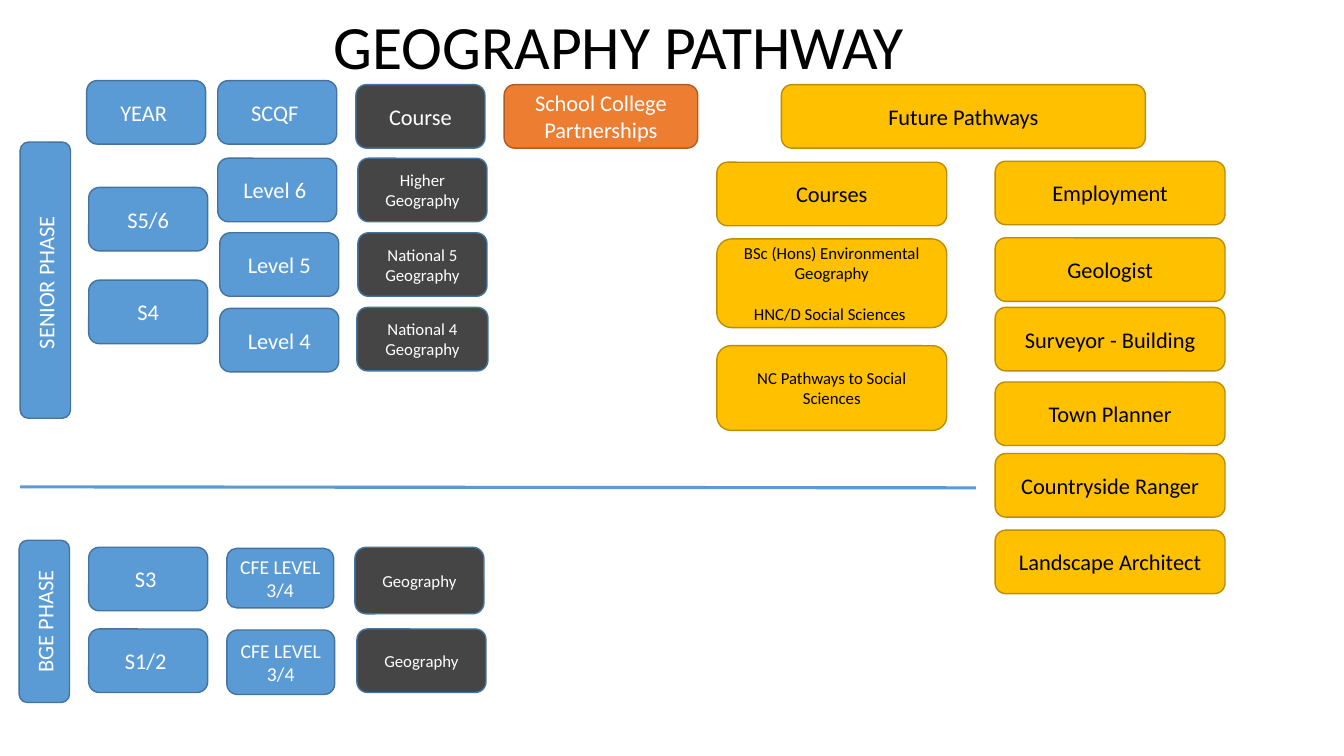
from pptx import Presentation
from pptx import util as u
from pptx.dml.color import RGBColor
from pptx.enum import shapes, text
from pptx.oxml.ns import qn
from lxml import etree

PX = 9144
FONT = "Calibri"
SLIDE = (1333, 750)
TITLE = ("GEOGRAPHY PATHWAY", (218, 10, 792, 78))
DIVIDER = (20, 483, 968, 484)
LINE_BLUE = "5B9BD5"

STYLES = {
    "phase": {"fill": "5B9BD5", "line": "43739E", "text": "FFFFFF"},
    "course": {"fill": "454545", "line": "43739E", "text": "FFFFFF"},
    "college": {"fill": "ED7D31", "line": "AF5C24", "text": "FFFFFF"},
    "future": {"fill": "FFC000", "line": "BD8E00", "text": "000000"},
}

# style, left, width, height, size, [(top, label)]
COLUMNS = [
    ("phase", 86, 118, 63, 16, [(80, "YEAR ")]),
    ("phase", 88, 118, 63, 16, [(186, "S5/6"), (278, "S4"), (543, "S3 "), (624, "S1/2 ")]),
    ("phase", 216, 118, 63, 16, [(80, "SCQF "), (157, "Level 6 ")]),
    ("phase", 218, 118, 63, 16, [(231, "Level 5"), (306, "Level 4")]),
    ("phase", 225, 106, 59, 14, [(544, "CFE LEVEL 3/4")]),
    ("phase", 225, 107, 64, 14, [(625, "CFE LEVEL 3/4")]),
    ("course", 353, 128, 63, 16, [(84, "Course")]),
    ("course", 355, 128, 63, 12, [(157, "Higher Geography"), (231, "National 5 Geography")]),
    ("course", 354, 130, 63, 12, [(305, "National 4 Geography")]),
    ("course", 352, 128, 66, 12, [(543, "Geography")]),
    ("course", 354, 128, 63, 12, [(624, "Geography")]),
    ("college", 500, 192, 63, 16, [(84, "School College Partnerships")]),
    ("future", 775, 361, 63, 16, [(84, "Future Pathways")]),
    ("future", 711, 228, 63, 16, [(161, "Courses")]),
    ("future", 711, 228, 88, 12, [(237, "BSc (Hons) Environmental Geography\nHNC/D Social Sciences ")]),
    ("future", 711, 228, 84, 12, [(343, "NC Pathways to Social Sciences")]),
    ("future", 987, 228, 63, 16, [
        (160, "Employment"), (236, "Geologist"), (305, "Surveyor - Building"),
        (379, "Town Planner"), (450, "Countryside Ranger"), (526, "Landscape Architect")]),
]
PHASES = [("SENIOR PHASE ", (20, 141, 50, 274)), ("BGE PHASE", (19, 536, 50, 161))]


def px(values):
    return [v * PX for v in values]


def color(value):
    return RGBColor.from_string(value)


def write(sp, label, size, ink, spacing=1.0):
    tf = sp.text_frame
    tf.word_wrap = True
    tf.vertical_anchor = text.MSO_ANCHOR.MIDDLE
    for i, line in enumerate(label.split("\n")):
        p = tf.paragraphs[0] if i == 0 else tf.add_paragraph()
        p.alignment = text.PP_ALIGN.CENTER
        p.line_spacing = spacing
        if i:
            p.space_before = u.Pt(size * 1.2)
        r = p.add_run()
        r.text = line
        for name, value in {"name": FONT, "size": u.Pt(size)}.items():
            setattr(r.font, name, value)
        r.font.color.rgb = color(ink)


def add_box(s, style, box, label, size):
    look = STYLES[style]
    sp = s.shapes.add_shape(shapes.MSO_SHAPE.ROUNDED_RECTANGLE, *px(box))
    sp.shadow.inherit = False
    sp.fill.solid()
    sp.fill.fore_color.rgb = color(look["fill"])
    sp.line.color.rgb = color(look["line"])
    sp.line.width = u.Pt(1)
    write(sp, label, size, look["text"])
    return sp


def main():
    prs = Presentation()
    prs.slide_width, prs.slide_height = px(SLIDE)
    s = prs.slides.add_slide(prs.slide_layouts[6])

    label, box = TITLE
    write(s.shapes.add_textbox(*px(box)), label, 44, "000000", 0.9)

    for style, left, width, height, size, rows in COLUMNS:
        for top, label in rows:
            add_box(s, style, (left, top, width, height), label, size)

    for label, box in PHASES:
        sp = add_box(s, "phase", box, label, 16)
        sp.text_frame._txBody.bodyPr.set("vert", "vert270")

    divider = s.shapes.add_connector(shapes.MSO_CONNECTOR.STRAIGHT, *px(DIVIDER))
    divider.line.color.rgb = color(LINE_BLUE)
    divider.line.width = u.Pt(2.25)
    etree.SubElement(divider._element.spPr, qn("a:effectLst"))

    prs.save("out.pptx")


if __name__ == "__main__":
    main()
